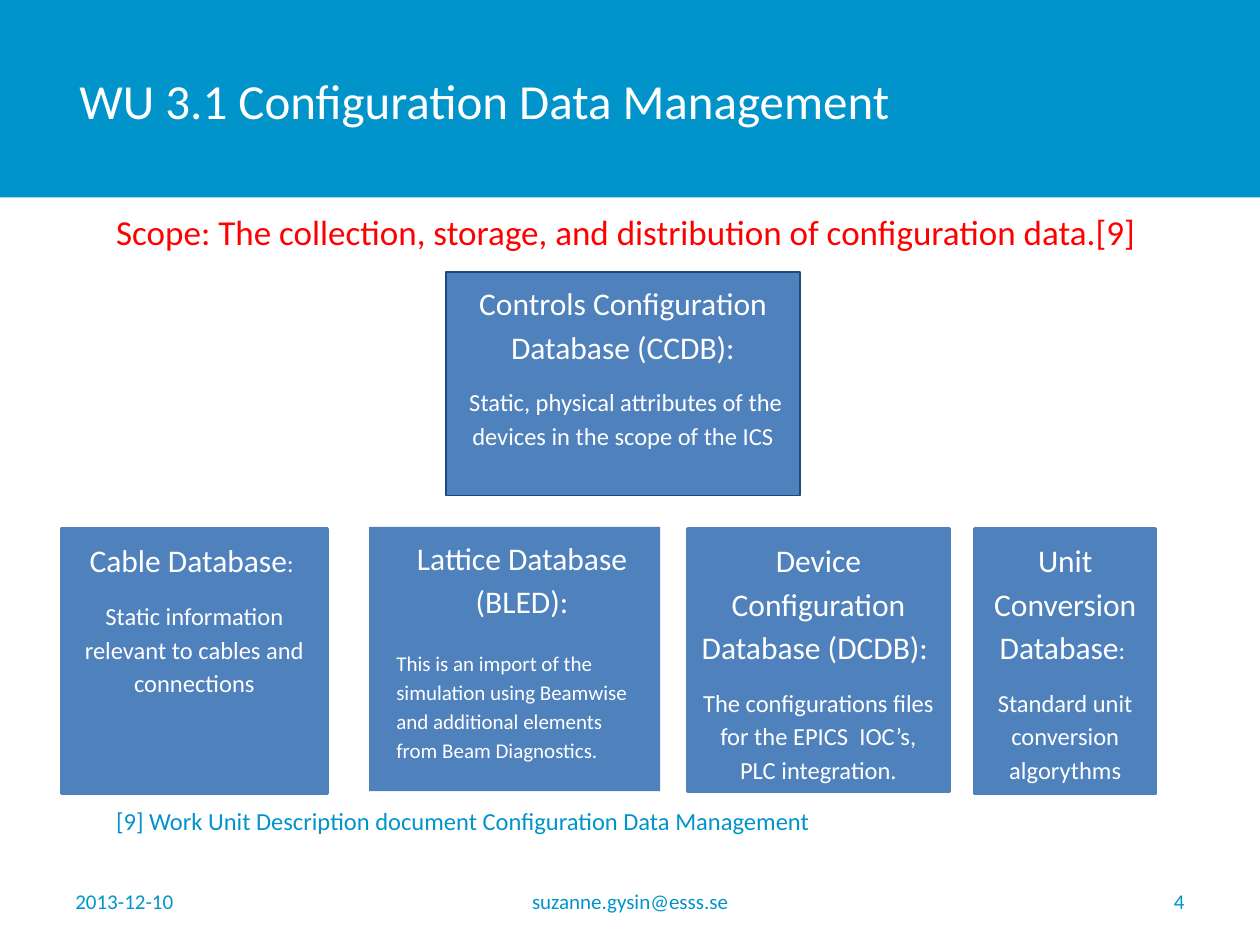
from lxml.etree import SubElement
from pptx import Presentation
from pptx.dml.color import RGBColor
from pptx.enum.shapes import MSO_SHAPE
from pptx.enum.text import MSO_ANCHOR, MSO_AUTO_SIZE, PP_ALIGN
from pptx.oxml.ns import qn
from pptx.util import Cm, Pt

BLUE, BOX, NAVY, RED, WHITE = "0094CA", "4F81BD", "1F497D", "FF0000", "FFFFFF"
LEFT, MID, RIGHT = PP_ALIGN.LEFT, PP_ALIGN.CENTER, PP_ALIGN.RIGHT

TITLE = "WU 3.1 Configuration Data Management"
BODY = [
    ("Scope: The collection, storage, and distribution of configuration data.[9]",
     20, RED, 0),
    ("[9] Work Unit Description document Configuration Data Management",
     14, BLUE, 297),
]
FOOT = [
    ("2013-12-10", 1.27, 5.93, LEFT),
    ("suzanne.gysin@esss.se", 8.68, 8.05, MID),
    ("4", 18.2, 5.93, RIGHT),
]
HEAD = {"alignment": MID, "line_spacing": 1.15, "space_after": Pt(10)}
TIGHT = {"alignment": MID, "line_spacing": 1.15, "space_after": Pt(0)}
NOTE = {"alignment": LEFT, "line_spacing": 1.15, "space_before": Pt(15.5)}

# place (cm), line colour and width, left indent (cm), paragraphs of (format, runs)
BOXES = [
    ((13.87, 10.67, 5.26, 5.28), (BOX, 2), 0, [
        (HEAD, [("Device Configuration Database (DCDB): ", 18)]),
        (HEAD, [("The configurations files for the EPICS  IOC’s, PLC integration.", 14)])]),
    ((1.24, 10.67, 5.36, 5.33), (BOX, 2), 0, [
        (HEAD, [("Cable Database", 18), (": ", 14)]),
        (HEAD, [("Static information relevant to cables and connections", 14)])]),
    ((7.44, 10.62, 5.87, 5.33), None, 0.3, [
        (TIGHT, [("Lattice Database (BLED):", 18)]),
        (NOTE, [("This is an import of the simulation using Beamwise and "
                 "additional elements from Beam Diagnostics.", 12)])]),
    ((8.99, 5.49, 7.14, 4.5), (NAVY, 1), 0, [
        (HEAD, [("Controls Configuration Database (CCDB):", 18)]),
        (HEAD, [(" Static, physical attributes of the devices in the scope of the ICS", 14)])]),
    ((19.66, 10.67, 3.63, 5.33), (BOX, 2), 0, [
        (HEAD, [("Unit Conversion Database", 18), (": ", 14)]),
        (HEAD, [("Standard unit conversion algorythms", 14)])]),
]


def rgb(code):
    return RGBColor.from_string(code)


def put(item, values):
    """Set each attribute of item named in values."""
    for name, value in values.items():
        setattr(item, name, value)


def place(shape, left, top, width, height):
    put(shape, {"left": Cm(left), "top": Cm(top),
                "width": Cm(width), "height": Cm(height)})


def write(par, runs, color, form):
    """Add (text, size) runs to a paragraph and format it."""
    put(par, form)
    for text, size in runs:
        run = par.add_run()
        run.text = text
        put(run.font, {"size": Pt(size), "name": "Calibri"})
        run.font.color.rgb = rgb(color)


def pars(frame, count):
    """Return count paragraphs of a frame, the first one included."""
    return [frame.paragraphs[0]] + [frame.add_paragraph() for _ in range(count - 1)]


def block(slide, spot, fill, edge=None):
    shape = slide.shapes.add_shape(MSO_SHAPE.RECTANGLE, *map(Cm, spot))
    shape.shadow.inherit = False
    shape.fill.solid()
    shape.fill.fore_color.rgb = rgb(fill)
    if edge:
        color, width = edge
        shape.line.color.rgb = rgb(color)
        shape.line.width = Pt(width)
    else:
        shape.line.fill.background()
    return shape


def main():
    deck = Presentation()
    put(deck, {"slide_width": Cm(25.4), "slide_height": Cm(19.05)})
    slide = deck.slides.add_slide(deck.slide_layouts[1])
    title, body = slide.shapes.title, slide.placeholders[1]

    banner = block(slide, (0, 0, 25.4, 3.98), BLUE)
    title.element.addprevious(banner.element)

    bare = {"margin_left": 0, "margin_top": 0, "margin_right": 0,
            "margin_bottom": 0, "word_wrap": True, "auto_size": MSO_AUTO_SIZE.NONE}
    place(title, 1.6, 0, 16.87, 4.01)
    put(title.text_frame, {**bare, "vertical_anchor": MSO_ANCHOR.MIDDLE})
    write(title.text_frame.paragraphs[0], [(TITLE, 28)], WHITE, {"alignment": LEFT})

    place(body, 2.34, 4.24, 20.96, 12.7)
    put(body.text_frame, {**bare, "vertical_anchor": MSO_ANCHOR.TOP})
    for par, (text, size, color, gap) in zip(pars(body.text_frame, len(BODY)), BODY):
        props = par._p.get_or_add_pPr()
        props.set("marL", "0")
        props.set("indent", "0")
        SubElement(props, qn("a:buNone"))
        write(par, [(text, size)], color, {
            "alignment": LEFT, "line_spacing": Pt(24),
            "space_before": Pt(gap), "space_after": Pt(12)})

    for text, left, width, align in FOOT:
        box = slide.shapes.add_textbox(Cm(left), Cm(17.65), Cm(width), Cm(1.02))
        put(box.text_frame, {"word_wrap": True, "vertical_anchor": MSO_ANCHOR.MIDDLE})
        write(box.text_frame.paragraphs[0], [(text, 12)], BLUE, {"alignment": align})

    for spot, edge, indent, content in BOXES:
        frame = block(slide, spot, BOX, edge).text_frame
        put(frame, {"word_wrap": True, "vertical_anchor": MSO_ANCHOR.TOP})
        for par, (form, runs) in zip(pars(frame, len(content)), content):
            par._p.get_or_add_pPr().set("marL", str(Cm(indent)))
            write(par, runs, WHITE, form)

    deck.save("out.pptx")


if __name__ == "__main__":
    main()
